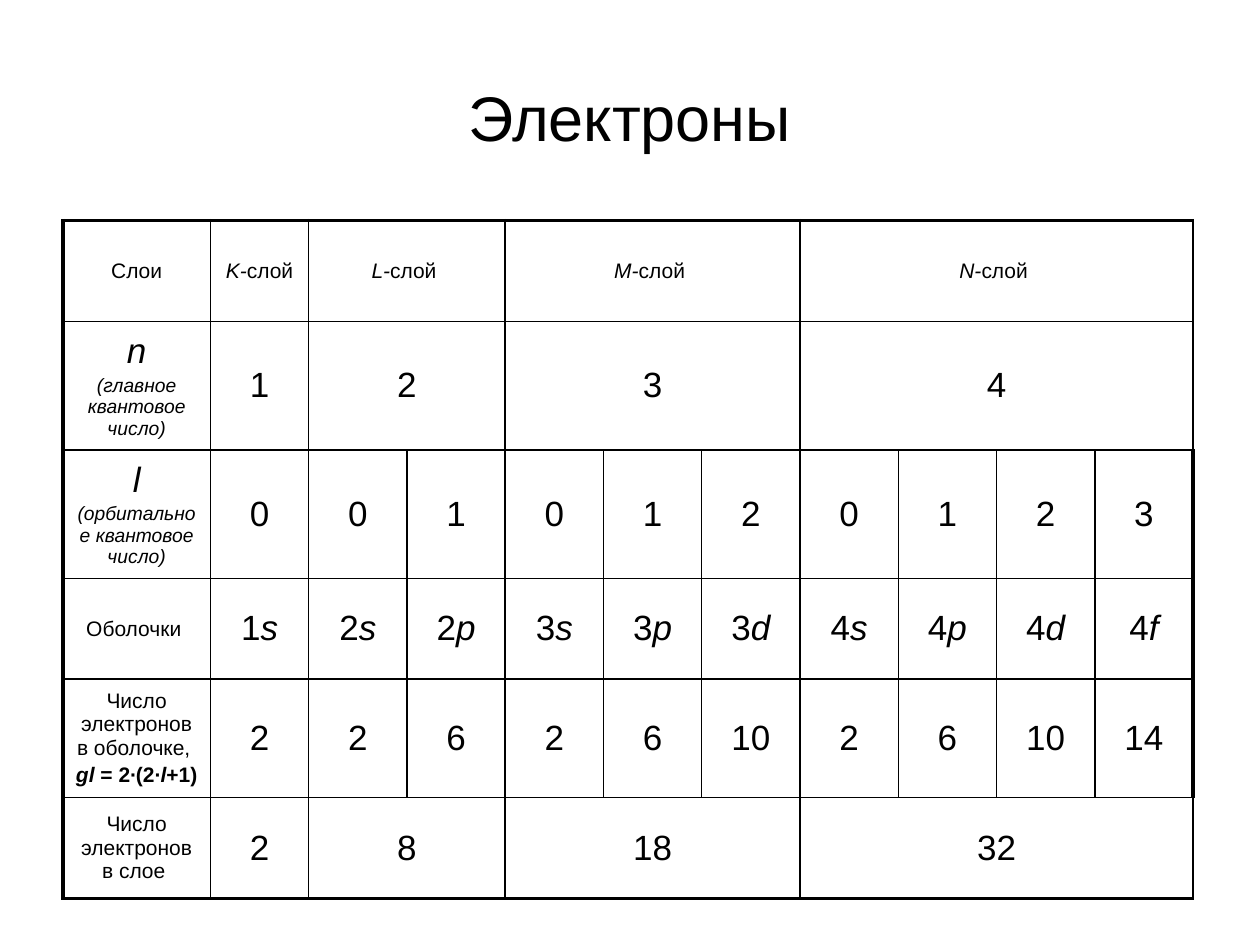
from lxml.etree import SubElement
from pptx import Presentation
from pptx.dml.color import RGBColor
from pptx.enum.text import MSO_ANCHOR, PP_ALIGN
from pptx.oxml.ns import qn
from pptx.util import Inches, Pt

COLORS = {"text": "000000", "border": "000000", "background": "FFFFFF"}
LABEL, NOTE, NUMBER, TITLE = 12, 11, 20, 36  # text sizes in points
THIN, THICK = 1, 2.25  # border widths in points

LAYERS = "KLMN"
SHELLS = "spdf"
COLUMN_WIDTHS = [1.17] + [0.78] * 10
ROW_HEIGHTS = [0.8, 1.02, 1.02, 0.8, 0.94, 0.8]

# Row labels: paragraphs of (text, size, bold); asterisks enclose italics
ROW_LABELS = [
    [("Слои", LABEL, False)],
    [("*n*", NUMBER, False), ("*(главное квантовое число)*", NOTE, False)],
    [("*l*", NUMBER, False), ("*(орбитальное квантовое число)*", NOTE, False)],
    [("Оболочки ", LABEL, False)],
    [("Число электронов в оболочке, ", LABEL, False),
     ("*gl* = 2∙(2∙*l*+1)", LABEL, True)],
    [("Число электронов в слое ", LABEL, False)],
]


class SlideBuilder:
    font = "Arial"

    def __init__(self, presentation):
        self.slide = presentation.slides.add_slide(presentation.slide_layouts[5])
        fill = self.slide.background.fill
        fill.solid()
        fill.fore_color.rgb = RGBColor.from_string(COLORS["background"])

    def add_text(self, paragraph, text, size, bold=False):
        paragraph.alignment = PP_ALIGN.CENTER
        for index, part in enumerate(text.split("*")):
            if part:
                run = paragraph.add_run()
                run.text = part
                run.font.name = self.font
                run.font.size = Pt(size)
                run.font.bold = bold
                run.font.italic = index % 2 == 1
                run.font.color.rgb = RGBColor.from_string(COLORS["text"])

    def title(self, text, left, top, width, height):
        shape = self.slide.shapes.title
        shape.left, shape.top = Inches(left), Inches(top)
        shape.width, shape.height = Inches(width), Inches(height)
        shape.text_frame.vertical_anchor = MSO_ANCHOR.MIDDLE
        self.add_text(shape.text_frame.paragraphs[0], text, TITLE)

    def table(self, left, top, column_widths, row_heights):
        rows, columns = len(row_heights), len(column_widths)
        table = self.slide.shapes.add_table(
            rows, columns, Inches(left), Inches(top),
            Inches(sum(column_widths)), Inches(sum(row_heights))).table
        table.first_row = table.horz_banding = False
        for column, width in zip(table.columns, column_widths):
            column.width = Inches(width)
        for row, height in zip(table.rows, row_heights):
            row.height = Inches(height)
        for r in range(rows):
            for c in range(columns):
                cell = table.cell(r, c)
                self.borders(cell, {"lnL": c == 0, "lnR": c == columns - 1,
                                    "lnT": r == 0, "lnB": r == rows - 1})
                cell.fill.background()
        return table

    def borders(self, cell, outer_sides):
        properties = cell._tc.get_or_add_tcPr()
        for side, is_outer in outer_sides.items():
            width = Pt(THICK if is_outer else THIN)
            line = SubElement(properties, qn(f"a:{side}"), w=str(width))
            fill = SubElement(line, qn("a:solidFill"))
            SubElement(fill, qn("a:srgbClr"), val=COLORS["border"])

    def cell(self, table, row, column, paragraphs, span=1):
        cell = table.cell(row, column)
        if span > 1:
            cell.merge(table.cell(row, column + span - 1))
        cell.vertical_anchor = MSO_ANCHOR.MIDDLE
        frame = cell.text_frame
        for index, (text, size, bold) in enumerate(paragraphs):
            paragraph = frame.add_paragraph() if index else frame.paragraphs[0]
            paragraph.space_before = Pt(size * 0.2)
            self.add_text(paragraph, text, size, bold)


def main():
    presentation = Presentation()
    presentation.slide_width, presentation.slide_height = Inches(10), Inches(7.5)
    builder = SlideBuilder(presentation)

    # Title
    builder.title("Электроны", 0.5, 0.3, 9, 1.25)

    # Table frame and row labels
    table = builder.table(0.5, 1.75, COLUMN_WIDTHS, ROW_HEIGHTS)
    for row, paragraphs in enumerate(ROW_LABELS):
        builder.cell(table, row, 0, paragraphs)

    # Layer n spans n columns, one for each shell l = 0 ... n - 1
    column = 1
    for n, layer in enumerate(LAYERS, start=1):
        builder.cell(table, 0, column, [(f"*{layer}-*слой ", LABEL, False)], n)
        builder.cell(table, 1, column, [(str(n), NUMBER, False)], n)
        builder.cell(table, 5, column, [(str(2 * n ** 2), NUMBER, False)], n)
        for l in range(n):
            values = [str(l), f"{n}*{SHELLS[l]}*", str(2 * (2 * l + 1))]
            for row, value in enumerate(values, start=2):
                builder.cell(table, row, column + l, [(value, NUMBER, False)])
        column += n

    presentation.save("out.pptx")


if __name__ == "__main__":
    main()
